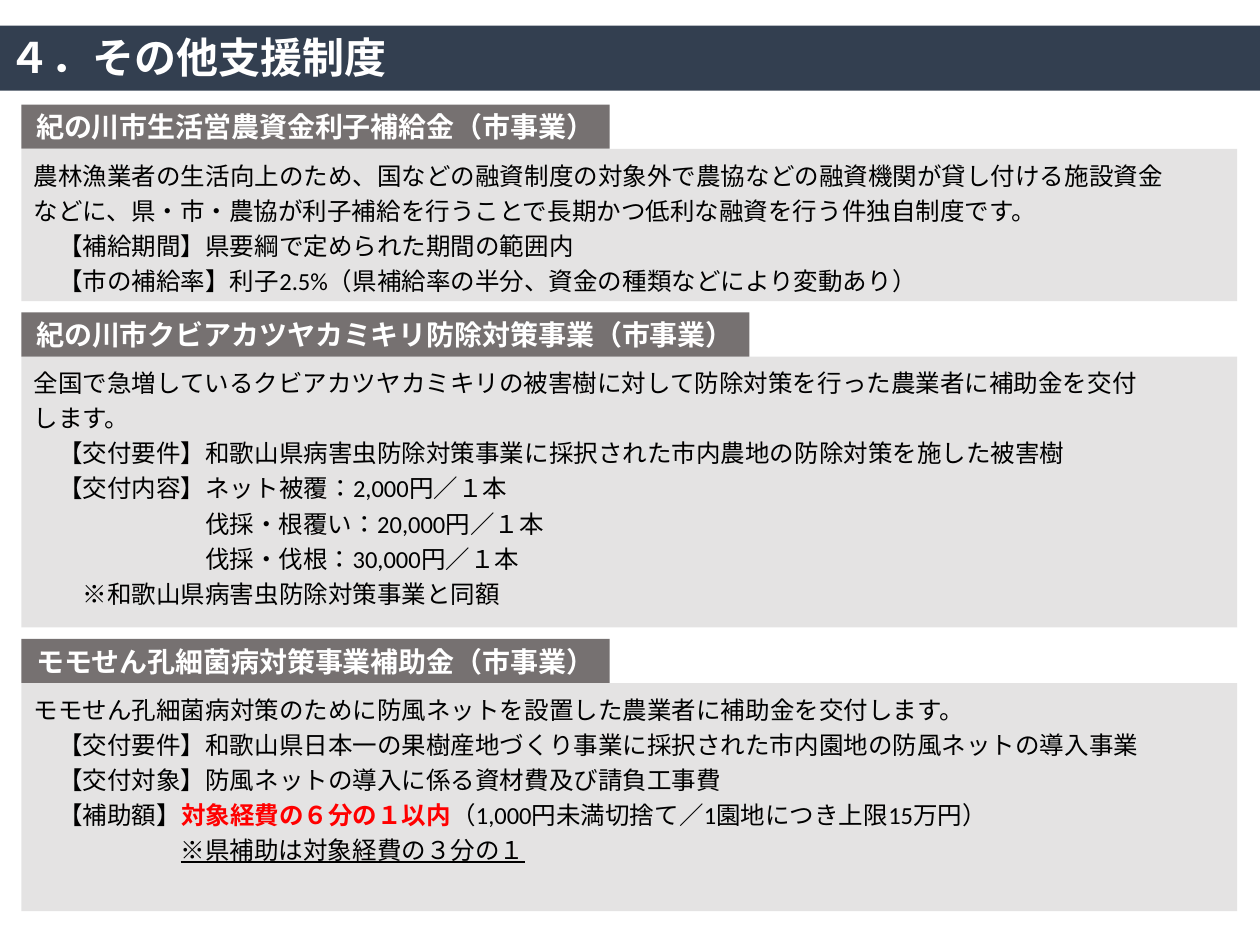
from lxml import etree
from pptx import Presentation
from pptx import util as u
from pptx.dml.color import RGBColor
from pptx.enum import lang, shapes, text
from pptx.oxml.ns import qn

THEME = dict(
    font="Calibri", navy="333F50", tag="767171", panel="D0CECE", panel_alpha=56,
    white="FFFFFF", black="000000", red="FF0000",
    title=24, heading=16, body=14, line=20,
)

TITLE = "４．その他支援制度"
RED = dict(color=THEME["red"], bold=True)

# Each line is (indent in characters, runs); each run is (text, format).
SECTIONS = [
    dict(heading="紀の川市生活営農資金利子補給金（市事業）",
         tag_w=11.86, panel_h=3.07, text_w=23.75, lines=[
        (0, [("農林漁業者の生活向上のため、国などの融資制度の対象外で農協などの融資機関が"
              "貸し付ける施設資金などに、県・市・農協が利子補給を行うことで長期かつ低利な"
              "融資を行う件独自制度です。", {})]),
        (1, [("【補給期間】県要綱で定められた期間の範囲内", {})]),
        (1, [("【市の補給率】利子2.5%（県補給率の半分、資金の種類などにより変動あり）", {})]),
    ]),
    dict(heading="紀の川市クビアカツヤカミキリ防除対策事業（市事業）",
         tag_w=14.68, panel_h=5.46, text_w=23.24, lines=[
        (0, [("全国で急増しているクビアカツヤカミキリの被害樹に対して防除対策を行った"
              "農業者に補助金を交付します。", {})]),
        (1, [("【交付要件】和歌山県病害虫防除対策事業に採択された市内農地の"
              "防除対策を施した被害樹", {})]),
        (1, [("【交付内容】ネット被覆：2,000円／１本", {})]),
        (7, [("伐採・根覆い：20,000円／１本", {})]),
        (7, [("伐採・伐根：30,000円／１本", {})]),
        (2, [("※和歌山県病害虫防除対策事業と同額", {})]),
    ]),
    dict(heading="モモせん孔細菌病対策事業補助金（市事業）",
         tag_w=11.86, panel_h=4.6, text_w=23.75, lines=[
        (0, [("モモせん孔細菌病対策のために防風ネットを設置した農業者に"
              "補助金を交付します。", {})]),
        (1, [("【交付要件】和歌山県日本一の果樹産地づくり事業に採択された"
              "市内園地の防風ネットの導入事業", {})]),
        (1, [("【交付対象】防風ネットの導入に係る資材費及び請負工事費", {})]),
        (1, [("【補助額】", {}), ("対象経費の６分の１以内", RED),
             ("（1,000円未満切捨て／1園地につき上限15万円）", {})]),
        (6, [("※県補助は対象経費の３分の１", dict(underline=True))]),
    ]),
]

# Layout in cm
LEFT, TOP, GAP = 0.43, 2.11, 0.23
TAG_H, PANEL_W = 0.89, 24.51


def add_run(p, content, size=THEME["body"], color=THEME["black"], bold=False, underline=None):
    r = p.add_run()
    r.text = content
    f = r.font
    f.name, f.size, f.bold, f.underline = THEME["font"], u.Pt(size), bold, underline
    f.color.rgb = RGBColor.from_string(color)
    f.language_id = lang.MSO_LANGUAGE_ID.JAPANESE
    latin = r._r.rPr.find(qn("a:latin"))
    ea = etree.Element(qn("a:ea"), typeface=THEME["font"])
    latin.addnext(ea)


def add_rect(slide, x, y, w, h, color, alpha=None):
    sp = slide.shapes.add_shape(shapes.MSO_SHAPE.RECTANGLE, *map(u.Cm, (x, y, w, h)))
    sp.shadow.inherit = False
    sp.line.fill.background()
    sp.fill.solid()
    sp.fill.fore_color.rgb = RGBColor.from_string(color)
    if alpha:
        clr = sp._element.spPr.find(".//" + qn("a:srgbClr"))
        etree.SubElement(clr, qn("a:alpha"), val=str(alpha * 1000))
    return sp


def add_title(slide):
    bar = add_rect(slide, 0, 0.52, 25.4, 1.31, THEME["navy"])
    slide.shapes._spTree.insert(2, bar._element)  # behind the title
    sp = slide.shapes.title
    sp.left, sp.top, sp.width, sp.height = map(u.Cm, (0, 0.53, 11.91, 1.35))
    tf = sp.text_frame
    tf.vertical_anchor = text.MSO_ANCHOR.MIDDLE
    tf.margin_left = tf.margin_right = u.Cm(0.18)
    tf.margin_top = tf.margin_bottom = u.Cm(0.1)
    p = tf.paragraphs[0]
    p.alignment, p.line_spacing = text.PP_ALIGN.LEFT, 0.9
    add_run(p, TITLE, size=THEME["title"], color=THEME["white"], bold=True)


def add_section(slide, y, section):
    # Grey panel
    panel_y = y + TAG_H
    add_rect(slide, LEFT, panel_y, PANEL_W, section["panel_h"],
             THEME["panel"], THEME["panel_alpha"])

    # Heading tag
    tag = add_rect(slide, LEFT, y, section["tag_w"], TAG_H, THEME["tag"])
    tag.text_frame.vertical_anchor = text.MSO_ANCHOR.MIDDLE
    p = tag.text_frame.paragraphs[0]
    p.alignment = text.PP_ALIGN.CENTER
    add_run(p, section["heading"], size=THEME["heading"], color=THEME["white"], bold=True)

    # Body text
    box = slide.shapes.add_textbox(
        *map(u.Cm, (LEFT, panel_y, section["text_w"], section["panel_h"])))
    tf = box.text_frame
    tf.word_wrap = True
    for i, (indent, runs) in enumerate(section["lines"]):
        p = tf.add_paragraph() if i else tf.paragraphs[0]
        p.line_spacing = u.Pt(THEME["line"])
        p._p.get_or_add_pPr().set("marL", str(u.Pt(indent * THEME["body"])))
        for content, fmt in runs:
            add_run(p, content, **fmt)


def main():
    prs = Presentation()
    prs.slide_width, prs.slide_height = u.Cm(25.4), u.Cm(19.05)
    slide = prs.slides.add_slide(prs.slide_layouts[5])
    add_title(slide)
    y = TOP
    for section in SECTIONS:
        add_section(slide, y, section)
        y += TAG_H + section["panel_h"] + GAP
    prs.save("out.pptx")


if __name__ == "__main__":
    main()
